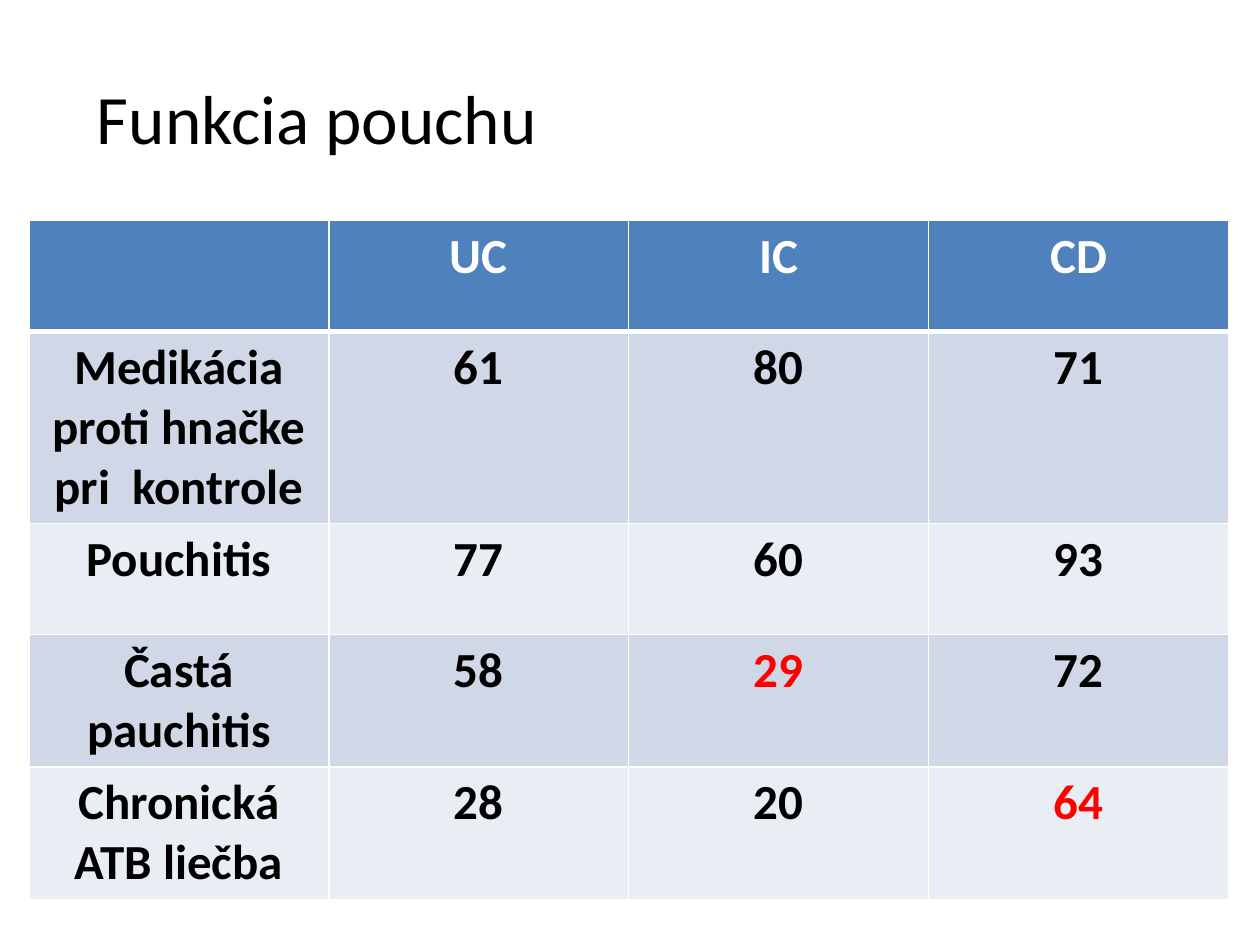
from dataclasses import dataclass

from lxml import etree
from pptx import Presentation
from pptx.dml.color import RGBColor
from pptx.enum.text import MSO_ANCHOR, PP_ALIGN
from pptx.oxml.ns import qn
from pptx.util import Inches, Pt

CENTER = PP_ALIGN.CENTER
MIDDLE = MSO_ANCHOR.MIDDLE
WIDE, HIGH = Inches(10), Inches(7.5)


@dataclass(frozen=True)
class Theme:
    """Hold the colours, font and type sizes."""
    font: str = "Calibri"
    title: float = 39.6
    body: float = 28
    ink: str = "000000"
    paper: str = "FFFFFF"
    alert: str = "FF0000"
    head: str = "4F81BD"
    bands: tuple = ("D0D8E8", "E9EDF4")
    thin: float = 1
    thick: float = 3


THEME = Theme()
ROWS = [
    ["", "UC", "IC", "CD"],
    ["Medikácia proti hnačke pri  kontrole", "61", "80", "71"],
    ["Pouchitis", "77", "60", "93"],
    ["Častá pauchitis", "58", "29", "72"],
    ["Chronická ATB liečba", "28", "20", "64"],
]
ALERTS = {(3, 2), (4, 3)}


def add_run(frame, text, size, color, bold=False):
    """Add one centred run to the first paragraph of a frame."""
    para = frame.paragraphs[0]
    para.alignment = CENTER
    run = para.add_run()
    run.text = text
    font = run.font
    font.name, font.size, font.bold = THEME.font, Pt(size), bold
    font.color.rgb = RGBColor.from_string(color)


def add_title(slide, text):
    """Place the title and write its text."""
    title = slide.shapes.title
    title.left, title.top = int(WIDE * 0.05), int(HIGH * 0.04)
    title.width, title.height = Inches(4.03), Inches(1.25)
    title.text_frame.vertical_anchor = MIDDLE
    add_run(title.text_frame, text, THEME.title, THEME.ink)


def set_edge(cell, side, width):
    """Draw one edge of a cell in the paper colour."""
    props = cell._tc.get_or_add_tcPr()
    line = etree.SubElement(props, qn(f"a:ln{side}"), w=str(Pt(width)))
    fill = etree.SubElement(line, qn("a:solidFill"))
    etree.SubElement(fill, qn("a:srgbClr"), val=THEME.paper)


def style_cell(cell, row):
    """Give a cell its edges and the fill of its row."""
    heavy = {(0, "B"), (1, "T")}
    for side in "LRTB":
        set_edge(cell, side, THEME.thick if (row, side) in heavy else THEME.thin)
    color = THEME.bands[(row - 1) % 2] if row else THEME.head
    cell.fill.solid()
    cell.fill.fore_color.rgb = RGBColor.from_string(color)


def pick_ink(row, col):
    """Return the text colour of a table cell."""
    if row == 0:
        return THEME.paper
    return THEME.alert if (row, col) in ALERTS else THEME.ink


def add_grid(slide, rows):
    """Add the table with equal columns and rows."""
    count, cols = len(rows), len(rows[0])
    frame = slide.shapes.add_table(
        count, cols, Inches(0.23), Inches(1.75),
        Inches(2.38) * cols, Inches(0.88) * count)
    for row, texts in enumerate(rows):
        for col, text in enumerate(texts):
            cell = frame.table.cell(row, col)
            style_cell(cell, row)
            if text:
                add_run(cell.text_frame, text, THEME.body, pick_ink(row, col), True)


def main():
    """Build and save the slide."""
    deck = Presentation()
    deck.slide_width, deck.slide_height = WIDE, HIGH
    slide = deck.slides.add_slide(deck.slide_layouts[5])
    add_title(slide, "Funkcia pouchu")
    add_grid(slide, ROWS)
    deck.save("out.pptx")


if __name__ == "__main__":
    main()
